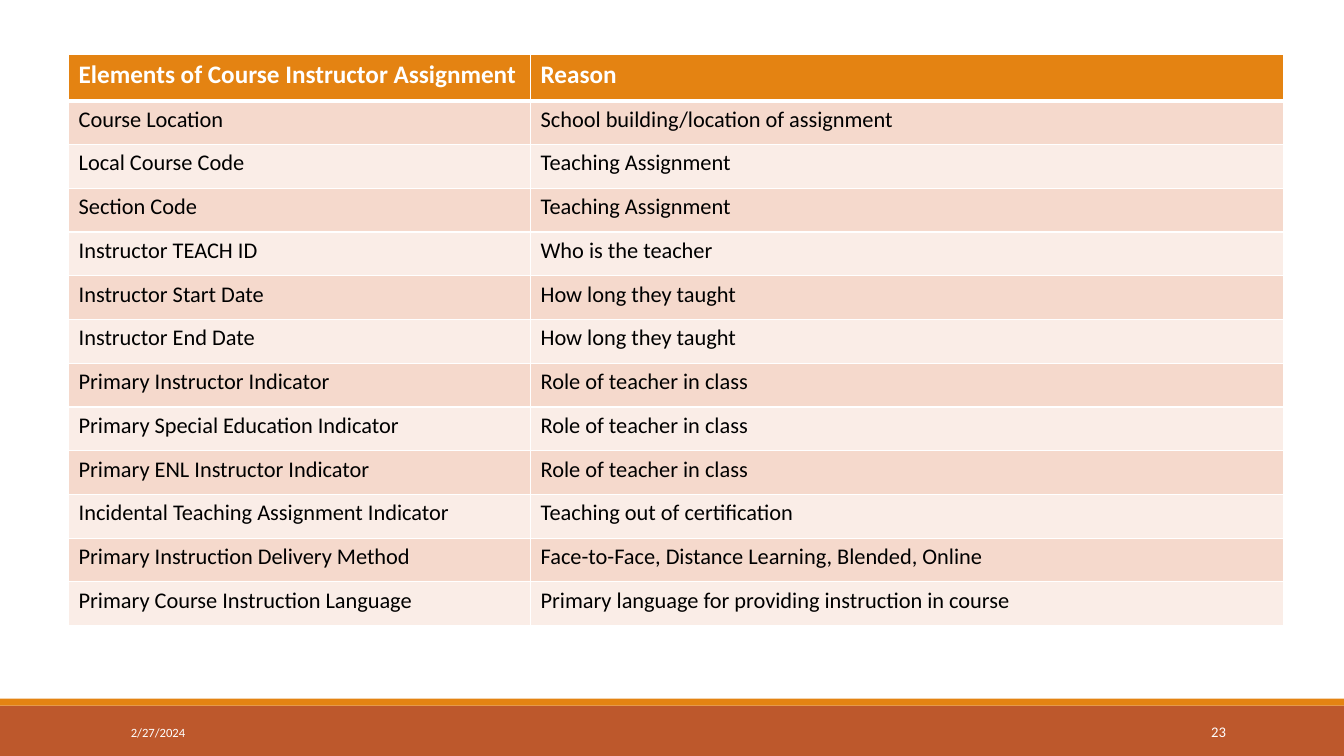
from lxml.etree import SubElement
from pptx import Presentation
from pptx.dml.color import RGBColor
from pptx.enum.shapes import MSO_SHAPE
from pptx.enum.text import MSO_ANCHOR as ANCHOR, PP_ALIGN as ALIGN
from pptx.oxml.ns import qn
from pptx.util import Pt

ORANGE, RUST, WHITE, BLACK = "E48312", "BD582C", "FFFFFF", "000000"
BANDS = ["F5D9CC", "FAEDE7"]
COLUMN_WIDTHS = [330, 537.6]
HEADER_HEIGHT, ROW_HEIGHT = 33, 31.25
ELEMENTS = [
    ("Elements of Course Instructor Assignment", "Reason"),
    ("Course Location", "School building/location of assignment"),
    ("Local Course Code", "Teaching Assignment"),
    ("Section Code", "Teaching Assignment"),
    ("Instructor TEACH ID", "Who is the teacher"),
    ("Instructor Start Date", "How long they taught"),
    ("Instructor End Date", "How long they taught"),
    ("Primary Instructor Indicator", "Role of teacher in class"),
    ("Primary Special Education Indicator", "Role of teacher in class"),
    ("Primary ENL Instructor Indicator", "Role of teacher in class"),
    ("Incidental Teaching Assignment Indicator", "Teaching out of certification"),
    ("Primary Instruction Delivery Method", "Face-to-Face, Distance Learning, Blended, Online"),
    ("Primary Course Instruction Language", "Primary language for providing instruction in course"),
]


def paint(fill, color):
    fill.solid()
    fill.fore_color.rgb = RGBColor.from_string(color)


def write(frame, text, size, color, bold=False, align=ALIGN.LEFT):
    paragraph = frame.paragraphs[0]
    paragraph.alignment = align
    run = paragraph.add_run()
    run.text = text
    run.font.name = "Calibri"
    run.font.size = Pt(size)
    run.font.bold = bold
    paint(run.font.fill, color)


deck = Presentation()
deck.slide_width, deck.slide_height = Pt(960), Pt(540)
slide = deck.slides.add_slide(deck.slide_layouts[6])

# Footer bands
for top, height, color in [(504, 36, RUST), (499, 5, ORANGE)]:
    band = slide.shapes.add_shape(MSO_SHAPE.RECTANGLE, 0, Pt(top), Pt(960), Pt(height))
    band.shadow.inherit = False
    band.line.fill.background()
    paint(band.fill, color)

# Table of elements and reasons
table = slide.shapes.add_table(
    len(ELEMENTS), 2, Pt(49), Pt(39), Pt(sum(COLUMN_WIDTHS)),
    Pt(HEADER_HEIGHT + ROW_HEIGHT * (len(ELEMENTS) - 1))).table
for column, width in zip(table.columns, COLUMN_WIDTHS):
    column.width = Pt(width)

for r, element in enumerate(ELEMENTS):
    header = r == 0
    table.rows[r].height = Pt(HEADER_HEIGHT if header else ROW_HEIGHT)
    for c, text in enumerate(element):
        cell = table.cell(r, c)
        cell_props = cell._tc.get_or_add_tcPr()
        for side in "LRTB":
            thick = (header and side == "B") or (r == 1 and side == "T")
            border = SubElement(cell_props, qn(f"a:ln{side}"), w=str(Pt(3 if thick else 1)))
            SubElement(SubElement(border, qn("a:solidFill")), qn("a:srgbClr"), val=WHITE)
        paint(cell.fill, ORANGE if header else BANDS[(r - 1) % 2])
        write(cell.text_frame, text, size=18 if header else 16,
              color=WHITE if header else BLACK, bold=header)

# Date and slide number
for text, left, width, size, align in [
    ("2/27/2024", 86.4, 194.4, 9, ALIGN.LEFT),
    ("23", 779.8, 103, 10.5, ALIGN.RIGHT),
]:
    frame = slide.shapes.add_textbox(Pt(left), Pt(508.5), Pt(width), Pt(28.8)).text_frame
    frame.word_wrap = True
    frame.vertical_anchor = ANCHOR.MIDDLE
    write(frame, text, size=size, color=WHITE, align=align)

deck.save("out.pptx")
